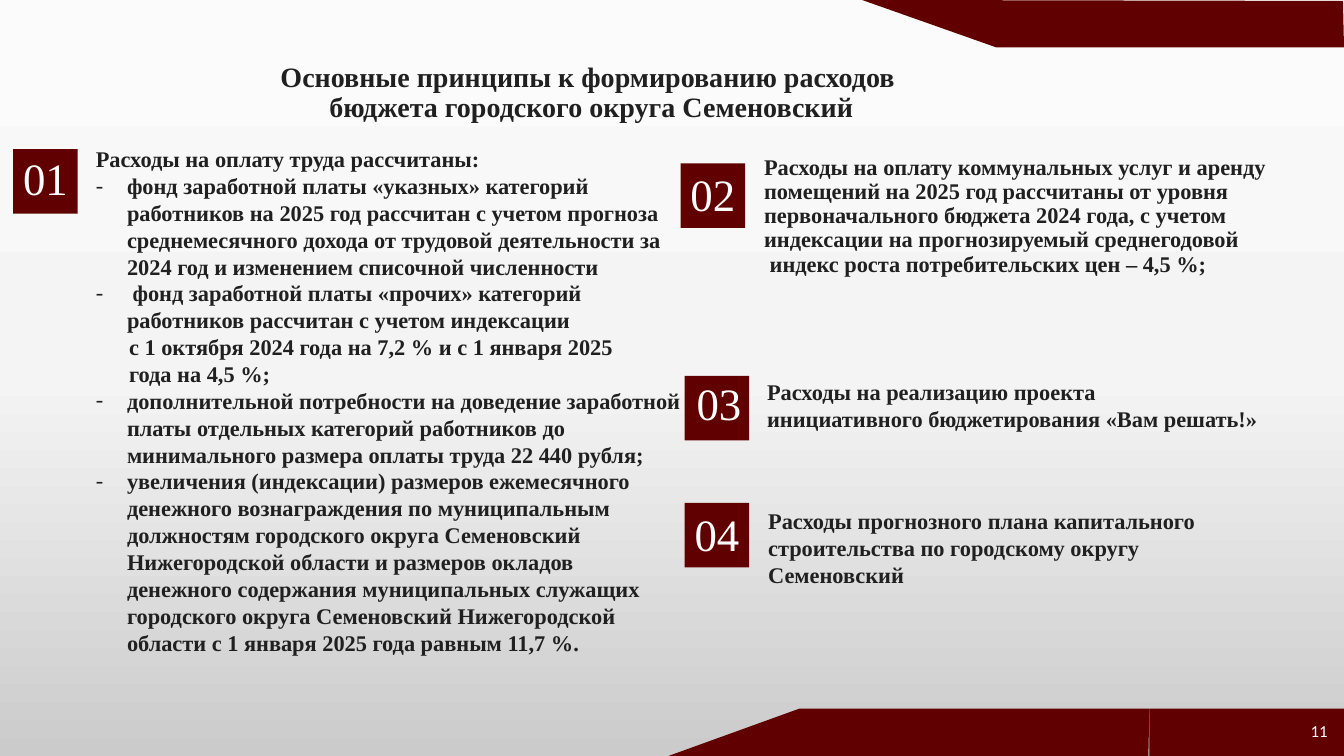
from copy import deepcopy
from dataclasses import dataclass

from lxml.etree import SubElement
from pptx import Presentation
from pptx.dml.color import RGBColor
from pptx.enum.shapes import MSO_SHAPE as Shape
from pptx.enum.text import MSO_ANCHOR as Anchor, MSO_AUTO_SIZE as AutoSize, PP_ALIGN as Align
from pptx.oxml.ns import qn
from pptx.util import Inches, Pt


@dataclass(frozen=True)
class Theme:
    maroon: RGBColor = RGBColor(0x60, 0x00, 0x00)
    ink: RGBColor = RGBColor(0x20, 0x20, 0x20)
    white: RGBColor = RGBColor(0xFF, 0xFF, 0xFF)
    backdrop: tuple = ((0, "FBFBFB"), (0.5, "F4F4F4"), (1, "CBCBCB"))
    serif: str = "Times New Roman"
    sans: str = "Calibri"
    title_size: int = 20
    body_size: int = 16
    badge_size: int = 32
    page_size: int = 12


@dataclass(frozen=True)
class Style:
    size: int
    color: RGBColor
    face: str
    bold: bool = False
    spacing: float = 1.0


@dataclass(frozen=True)
class Line:
    text: str
    margin: float = 0
    bullet: str = ""


@dataclass(frozen=True)
class Badge:
    number: str
    left: float
    top: float
    text_left: float
    text_top: float


@dataclass(frozen=True)
class Note:
    left: float
    top: float
    width: float
    height: float
    lines: tuple
    spacing: float = 1.0


THEME = Theme()
BADGE_SIDE = 0.64
HANG = 0.31

TITLE = "Основные принципы к формированию расходов \vбюджета городского округа Семеновский"

WAGES = (
    Line("Расходы на оплату труда рассчитаны:"),
    Line("фонд заработной платы «указных» категорий работников на 2025 год рассчитан с учетом "
         "прогноза среднемесячного дохода от трудовой деятельности за 2024 год и изменением "
         "списочной численности", HANG, "-"),
    Line(" фонд заработной платы «прочих» категорий \vработников рассчитан с учетом индексации",
         HANG, "-"),
    Line("с 1 октября 2024 года на 7,2 % и с 1 января 2025", 0.33),
    Line("года на 4,5 %;", 0.33),
    Line("дополнительной потребности на доведение заработной платы отдельных категорий "
         "работников до минимального размера оплаты труда 22 440 рубля;", HANG, "-"),
    Line("увеличения (индексации) размеров ежемесячного денежного вознаграждения по "
         "муниципальным должностям городского округа Семеновский Нижегородской области и "
         "размеров окладов денежного содержания муниципальных служащих городского округа "
         "Семеновский Нижегородской области с 1 января 2025 года равным 11,7 %.", HANG, "-"),
)

BADGES = (
    Badge("01", 0.13, 1.48, 0.13, 1.45),
    Badge("02", 6.75, 1.62, 6.75, 1.6),
    Badge("03", 6.79, 3.73, 6.81, 3.68),
    Badge("04", 6.79, 4.99, 6.79, 4.98),
)

NOTES = (
    Note(7.48, 1.5, 6, 1.31, (
        Line("Расходы на оплату коммунальных услуг и аренду помещений на 2025 год рассчитаны "
             "от уровня первоначального бюджета 2024 года, с учетом"),
        Line("индексации на прогнозируемый среднегодовой"),
        Line(" индекс роста потребительских цен – 4,5 %;")), 0.9),
    Note(7.51, 3.7, 6, 0.64, (
        Line("Расходы на реализацию проекта"),
        Line("инициативного бюджетирования «Вам решать!»"))),
    Note(7.52, 4.98, 4.58, 0.91, (
        Line("Расходы прогнозного плана капитального строительства по городскому округу "
             "Семеновский"),)),
)


def place(shape, left: float, top: float, width: float, height: float) -> None:
    shape.left, shape.top = Inches(left), Inches(top)
    shape.width, shape.height = Inches(width), Inches(height)


def write(shape, lines: tuple, style: Style, align=Align.LEFT, anchor=Anchor.TOP) -> None:
    frame = shape.text_frame
    frame.word_wrap, frame.auto_size = True, AutoSize.NONE
    frame.vertical_anchor = anchor
    for index, line in enumerate(lines):
        para = frame.add_paragraph() if index else frame.paragraphs[0]
        para.text = line.text
        para.alignment, para.line_spacing = align, style.spacing
        para.space_before = para.space_after = Pt(0)
        props = para._p.get_or_add_pPr()
        props.set("marL", str(Inches(line.margin)))
        props.set("indent", str(-Inches(line.margin) if line.bullet else 0))
        if line.bullet:
            SubElement(props, qn("a:buFont"), typeface=style.face)
            SubElement(props, qn("a:buChar"), char=line.bullet)
        else:
            SubElement(props, qn("a:buNone"))
        font = para.font
        font.name, font.size, font.bold = style.face, Pt(style.size), style.bold
        font.color.rgb = style.color


def add_text(page, left: float, top: float, width: float, height: float,
             lines: tuple, style: Style) -> None:
    box = page.shapes.add_textbox(*map(Inches, (left, top, width, height)))
    write(box, lines, style)


def paint(shape) -> None:
    shape.shadow.inherit = False
    shape.fill.solid()
    shape.fill.fore_color.rgb = THEME.maroon
    shape.line.fill.background()


def add_block(page, left: float, top: float, width: float, height: float) -> None:
    paint(page.shapes.add_shape(Shape.RECTANGLE, *map(Inches, (left, top, width, height))))


def add_band(page, points: tuple) -> None:
    corners = [(Inches(x), Inches(y)) for x, y in points]
    builder = page.shapes.build_freeform(*corners[0])
    builder.add_line_segments(corners[1:], close=True)
    paint(builder.convert_to_shape())


def set_backdrop(page) -> None:
    fill = page.background.fill
    fill.gradient()
    fill.gradient_angle = 270
    stops = next(page.element.iter(qn("a:gsLst")))
    stops.insert(1, deepcopy(stops[0]))
    for stop, (position, color) in zip(fill.gradient_stops, THEME.backdrop):
        stop.position, stop.color.rgb = position, RGBColor.from_string(color)


def main() -> None:
    deck = Presentation()
    deck.slide_width, deck.slide_height = Inches(13.33), Inches(7.5)
    page = deck.slides.add_slide(deck.slide_layouts[1])
    set_backdrop(page)

    # Corner bands
    add_band(page, ((13.32, 0.01), (8.55, 0), (9.88, 0.47), (13.33, 0.47)))
    add_band(page, ((11.4, 7.03), (7.93, 7.03), (6.63, 7.5), (11.39, 7.5)))
    add_block(page, 11.4, 7.03, 1.93, 0.47)

    # Title
    heading = Style(THEME.title_size, THEME.ink, THEME.serif, True, 0.9)
    title = page.shapes.title
    place(title, 0.78, 0.2, 10.17, 1.45)
    write(title, (Line(TITLE),), heading, Align.CENTER, Anchor.MIDDLE)

    # Numbered squares
    numeral = Style(THEME.badge_size, THEME.white, THEME.serif)
    for badge in BADGES:
        add_block(page, badge.left, badge.top, BADGE_SIDE, BADGE_SIDE)
        add_text(page, badge.text_left, badge.text_top, 1.01, BADGE_SIDE,
                 (Line(badge.number),), numeral)

    # Wage list on the left
    body = page.placeholders[1]
    place(body, 0.85, 1.39, 6, 5.49)
    write(body, WAGES, Style(THEME.body_size, THEME.ink, THEME.serif, True))

    # Notes on the right
    for note in NOTES:
        add_text(page, note.left, note.top, note.width, note.height, note.lines,
                 Style(THEME.body_size, THEME.ink, THEME.serif, True, note.spacing))

    # Page number
    add_text(page, 12.9, 7.12, 0.39, 0.4, (Line("11"),),
             Style(THEME.page_size, THEME.white, THEME.sans, spacing=0.9))

    deck.save("out.pptx")


if __name__ == "__main__":
    main()
